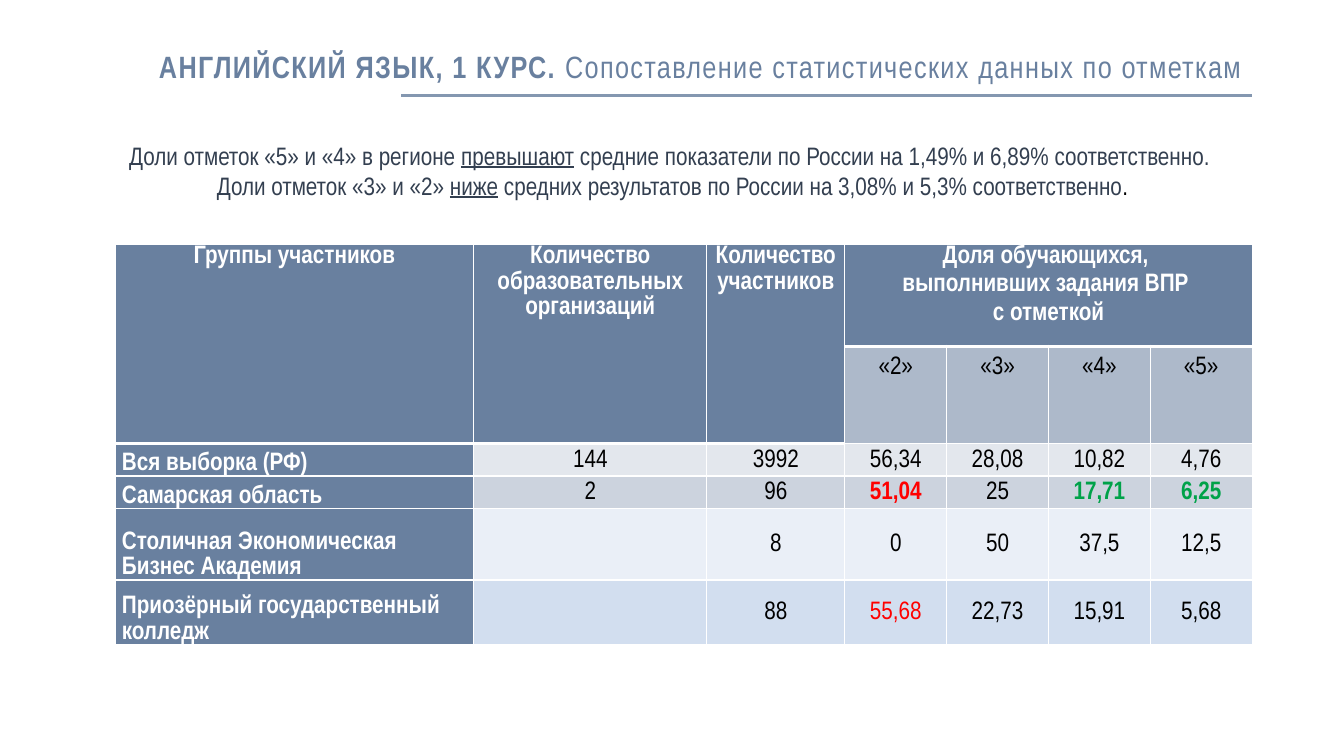
from dataclasses import dataclass

from lxml import etree
from pptx import Presentation
from pptx.dml.color import RGBColor
from pptx.enum.shapes import MSO_CONNECTOR as Connector
from pptx.enum.text import MSO_ANCHOR as Anchor, PP_ALIGN as Align
from pptx.oxml.ns import qn
from pptx.util import Pt

EMU_PER_PX = 9144


@dataclass(frozen=True)
class Theme:
    font: str = "Arial Narrow"
    slate: str = "69809F"
    rule: str = "8497B0"
    body: str = "333F50"
    subhead: str = "ADB9CA"
    white: str = "FFFFFF"
    black: str = "000000"
    red: str = "FF0000"
    green: str = "00A249"
    bands: tuple = ("E3E7ED", "CCD3DE", "EAEFF7", "D2DEEF")
    title_size: int = 22
    text_size: int = 18


THEME = Theme()

TITLE = [("АНГЛИЙСКИЙ ЯЗЫК, 1 КУРС. ", {"bold": True}),
         ("Сопоставление статистических данных по отметкам", {})]
SUMMARY = [
    [("Доли отметок «5» и «4» в регионе ", {}),
     ("превышают", {"underline": True}),
     (" средние показатели по России на 1,49% и 6,89% соответственно. ", {})],
    [("Доли отметок «3» и «2» ", {}),
     ("ниже", {"underline": True}),
     (" средних результатов по России на 3,08% и 5,3% соответственно", {}),
     (".", {"color": THEME.black})],
]
HEADS = ["Группы участников",
         "Количество образовательных организаций",
         "Количество участников",
         "Доля обучающихся, \nвыполнивших задания ВПР \nс отметкой"]
MARKS = ["«2»", "«3»", "«4»", "«5»"]
GROUPS = [
    ["Вся выборка (РФ)", "144", "3992", "56,34", "28,08", "10,82", "4,76"],
    ["Самарская область", "2", "96", "51,04", "25", "17,71", "6,25"],
    ["Столичная Экономическая Бизнес Академия", "", "8", "0", "50", "37,5", "12,5"],
    ["Приозёрный государственный колледж", "", "88", "55,68", "22,73", "15,91", "5,68"],
]
HIGHLIGHTS = {
    (1, 3): {"color": THEME.red, "bold": True},
    (1, 5): {"color": THEME.green, "bold": True},
    (1, 6): {"color": THEME.green, "bold": True},
    (3, 3): {"color": THEME.red},
}
COLUMN_WIDTHS = [356, 231, 137] + [101] * 4
ROW_HEIGHTS = [101, 95, 31, 31, 71, 64]
FIRST_MARK = 3
FIRST_GROUP = 2


def px(length):
    return length * EMU_PER_PX


def set_all(target, values):
    for name, value in values.items():
        setattr(target, name, value)


def add_span(para, text, color, size=THEME.text_size, **font_values):
    span = para.add_run()
    span.text = text
    set_all(span.font, {"name": THEME.font, "size": Pt(size), "bold": False, **font_values})
    span.font.color.rgb = RGBColor.from_string(color)
    return span


def add_text_frame(slide, box, anchor):
    frame = slide.shapes.add_textbox(*map(px, box)).text_frame
    set_all(frame, {"word_wrap": True, "vertical_anchor": anchor})
    return frame


def add_heading(slide, box):
    """Right-aligned title with a rule along the bottom of its box."""
    left, top, width, height = box
    para = add_text_frame(slide, box, Anchor.MIDDLE).paragraphs[0]
    set_all(para, {"alignment": Align.RIGHT, "line_spacing": 0.9})
    for text, values in TITLE:
        span = add_span(para, text, THEME.slate, THEME.title_size, **values)
        span.font._element.set("spc", "100")

    right, bottom = left + width, top + height
    rule = slide.shapes.add_connector(
        Connector.STRAIGHT, px(right - 844), px(bottom), px(right), px(bottom))
    rule.line.color.rgb = RGBColor.from_string(THEME.rule)
    rule.line.width = Pt(2.25)
    etree.SubElement(rule._element.spPr, qn("a:effectLst"))


def add_summary(slide, box):
    frame = add_text_frame(slide, box, Anchor.TOP)
    for index, spans in enumerate(SUMMARY):
        para = frame.add_paragraph() if index else frame.paragraphs[0]
        para.alignment = Align.CENTER
        for text, values in spans:
            add_span(para, text, **{"color": THEME.body, **values})


def set_borders(cell, widths):
    """Draw white borders; widths maps an edge letter to points."""
    properties = cell._tc.get_or_add_tcPr()
    for edge, width in widths.items():
        line = etree.SubElement(properties, qn(f"a:ln{edge}"), w=str(Pt(width)))
        fill = etree.SubElement(line, qn("a:solidFill"))
        etree.SubElement(fill, qn("a:srgbClr"), val=THEME.white)


def style_cell(cell, row, column):
    """Give a cell its borders, fill and insets by its place in the grid."""
    thick_bottom = row == 0 or (row == 1 and column < FIRST_MARK)
    thick_top = (row == 1 and column >= FIRST_MARK) or (
        row == FIRST_GROUP and column < FIRST_MARK)
    set_borders(cell, {"L": 1, "R": 1, "T": 3 if thick_top else 1,
                       "B": 3 if thick_bottom else 1})
    if row == 0 or column == 0 or (row == 1 and column < FIRST_MARK):
        color = THEME.slate
    elif row == 1:
        color = THEME.subhead
    else:
        color = THEME.bands[row - FIRST_GROUP]
    cell.fill.solid()
    cell.fill.fore_color.rgb = RGBColor.from_string(color)
    set_all(cell, {"margin_left": px(7), "margin_right": px(7),
                   "margin_top": 0, "margin_bottom": 0})


def write_cell(cell, text, anchor, align=Align.CENTER, **font_values):
    cell.vertical_anchor = anchor
    for index, line in enumerate(text.split("\n")):
        frame = cell.text_frame
        para = frame.add_paragraph() if index else frame.paragraphs[0]
        set_all(para, {"alignment": align, "line_spacing": 1.07,
                       "space_before": Pt(1), "space_after": Pt(1)})
        add_span(para, line, **font_values)


def add_marks_table(slide, box):
    table = slide.shapes.add_table(
        len(ROW_HEIGHTS), len(COLUMN_WIDTHS), *map(px, box)).table
    set_all(table, {"first_row": False, "horz_banding": False})
    for column, width in zip(table.columns, COLUMN_WIDTHS):
        column.width = px(width)
    for row, height in zip(table.rows, ROW_HEIGHTS):
        row.height = px(height)
    for row in range(len(ROW_HEIGHTS)):
        for column in range(len(COLUMN_WIDTHS)):
            style_cell(table.cell(row, column), row, column)

    strong = {"color": THEME.white, "bold": True}
    for column, text in enumerate(HEADS):
        end = (1, column) if column < FIRST_MARK else (0, len(COLUMN_WIDTHS) - 1)
        cell = table.cell(0, column)
        cell.merge(table.cell(*end))
        write_cell(cell, text, Anchor.TOP, **strong)
    for column, text in enumerate(MARKS, FIRST_MARK):
        cell = table.cell(1, column)
        write_cell(cell, text, Anchor.TOP, color=THEME.black)
        cell.margin_top = px(8)
    for index, (group, *values) in enumerate(GROUPS):
        row = index + FIRST_GROUP
        write_cell(table.cell(row, 0), group, Anchor.BOTTOM, Align.LEFT, **strong)
        for column, value in enumerate(values, 1):
            if value:
                look = HIGHLIGHTS.get((index, column), {"color": THEME.black})
                write_cell(table.cell(row, column), value, Anchor.MIDDLE, **look)


def main():
    deck = Presentation()
    set_all(deck, {"slide_width": px(1333), "slide_height": px(750)})
    slide = deck.slides.add_slide(deck.slide_layouts[6])
    add_heading(slide, (95, 40, 1147, 55))
    add_summary(slide, (92, 134, 1150, 71))
    add_marks_table(slide, (114, 242, sum(COLUMN_WIDTHS), sum(ROW_HEIGHTS)))
    deck.save("out.pptx")


if __name__ == "__main__":
    main()
